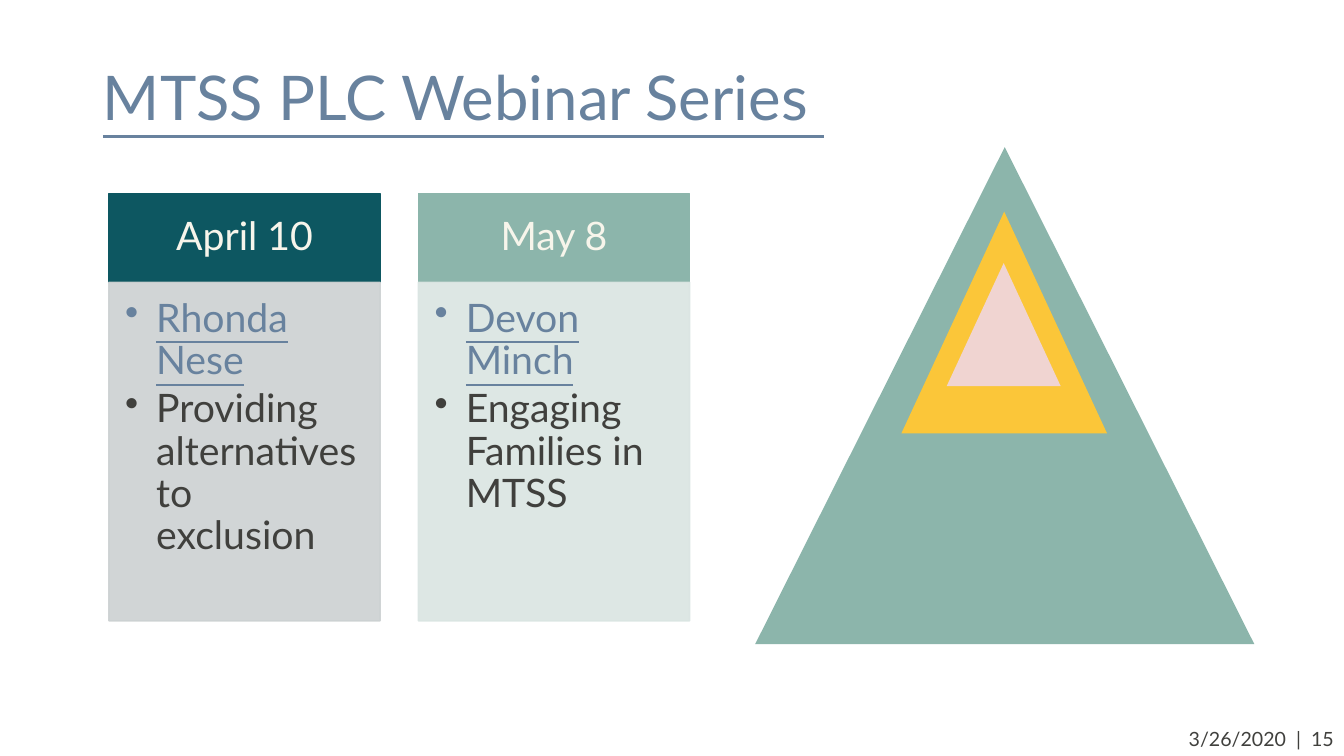
from pptx import Presentation
from pptx import util as u
from pptx.dml.color import RGBColor
from pptx.enum import shapes, text
from pptx.oxml.ns import qn
from lxml import etree

COLORS = {
    "blue": "68829E", "dark": "40403D", "cream": "F7F5EB",
    "teal": "0D5761", "sage": "8CB5AB", "grey": "CCD1D2", "mist": "DAE5E2",
    "gold": "FBC639", "pink": "F0D4D1",
}


def rgb(color):
    return RGBColor.from_string(COLORS[color])


def write(paragraph, words, size=28, color="dark", underline=False,
          align=text.PP_ALIGN.LEFT, spacing=None, after=0, bullet=False):
    """Fill one paragraph with formatted text."""
    if bullet:
        paragraph.level = 1
        props = paragraph._p.get_or_add_pPr()
        props.set("marL", str(u.Inches(0.31)))
        props.set("indent", str(u.Inches(-0.31)))
        etree.SubElement(props, qn("a:buChar")).set("char", "•")
    paragraph.alignment = align
    paragraph.line_spacing = spacing
    paragraph.space_after = u.Pt(after)
    run = paragraph.add_run()
    run.text = words
    run.font.name = "Lato"
    run.font.size = u.Pt(size)
    run.font.underline = underline
    run.font.color.rgb = rgb(color)


class WebinarSlide:
    def __init__(self, deck):
        self.slide = deck.slides.add_slide(deck.slide_layouts[5])

    def title(self, words, *place):
        heading = self.slide.shapes.title
        heading.left, heading.top, heading.width, heading.height = map(u.Inches, place)
        frame = heading.text_frame
        frame.auto_size = text.MSO_AUTO_SIZE.NONE
        frame.vertical_anchor = text.MSO_ANCHOR.MIDDLE
        write(frame.paragraphs[0], words, size=44, color="blue", underline=True, spacing=0.9)

    def shape(self, kind, place, color, outlined=False, opacity=100):
        part = self.slide.shapes.add_shape(kind, *map(u.Inches, place))
        part.shadow.inherit = False
        part.fill.solid()
        part.fill.fore_color.rgb = rgb(color)
        if outlined:
            part.line.color.rgb = rgb(color)
            part.line.width = u.Pt(1)
        else:
            part.line.fill.background()
        if opacity < 100:
            for shade in part._element.spPr.iter(qn("a:srgbClr")):
                etree.SubElement(shade, qn("a:alpha")).set("val", str(opacity * 1000))
        return part

    def panel(self, place, color, insets, anchor, opacity=100):
        frame = self.shape(shapes.MSO_SHAPE.RECTANGLE, place, color, True, opacity).text_frame
        frame.word_wrap = True
        frame.vertical_anchor = anchor
        (frame.margin_left, frame.margin_top,
         frame.margin_right, frame.margin_bottom) = map(u.Inches, insets)
        return frame

    def session(self, left, date, speaker, topic, head_color, body_color):
        head = self.panel((left, 1.92, 2.69, 0.88), head_color,
                          (0.22, 0.12, 0.22, 0.12), text.MSO_ANCHOR.MIDDLE)
        write(head.paragraphs[0], date, color="cream",
              align=text.PP_ALIGN.CENTER, spacing=0.9, after=9.8)
        body = self.panel((left, 2.8, 2.69, 3.36), body_color,
                          (0.16, 0.16, 0.22, 0.24), text.MSO_ANCHOR.TOP, opacity=90)
        listing = dict(spacing=0.9, after=4.2, bullet=True)
        write(body.paragraphs[0], speaker, color="blue", underline=True, **listing)
        write(body.add_paragraph(), topic, **listing)

    def footer(self, words, *place):
        frame = self.slide.shapes.add_textbox(*map(u.Inches, place)).text_frame
        frame.word_wrap = True
        write(frame.paragraphs[0], words, size=14, align=text.PP_ALIGN.RIGHT)


def main():
    deck = Presentation()
    deck.slide_width, deck.slide_height = u.Inches(13.33), u.Inches(7.5)
    page = WebinarSlide(deck)
    page.title("MTSS PLC Webinar Series ", 0.92, 0.46, 11.5, 1.08)

    # Webinar sessions
    sessions = [
        ("April 10", "Rhonda Nese", "Providing alternatives to exclusion", "teal", "grey"),
        ("May 8", "Devon Minch", "Engaging Families in MTSS", "sage", "mist"),
    ]
    for column, session in enumerate(sessions):
        page.session(1.08 + 3.07 * column, *session)

    # Nested tiers of support
    tiers = [
        ((7.49, 1.46, 4.95, 4.93), "sage"),
        ((8.94, 2.1, 2.04, 2.2), "gold"),
        ((9.39, 2.61, 1.13, 1.22), "pink"),
    ]
    for place, color in tiers:
        page.shape(shapes.MSO_SHAPE.ISOSCELES_TRIANGLE, place, color)

    # Date and page number
    page.footer("3/26/2020  |  15", 11.62, 7.16, 1.71, 0.34)
    deck.save("out.pptx")


if __name__ == "__main__":
    main()
